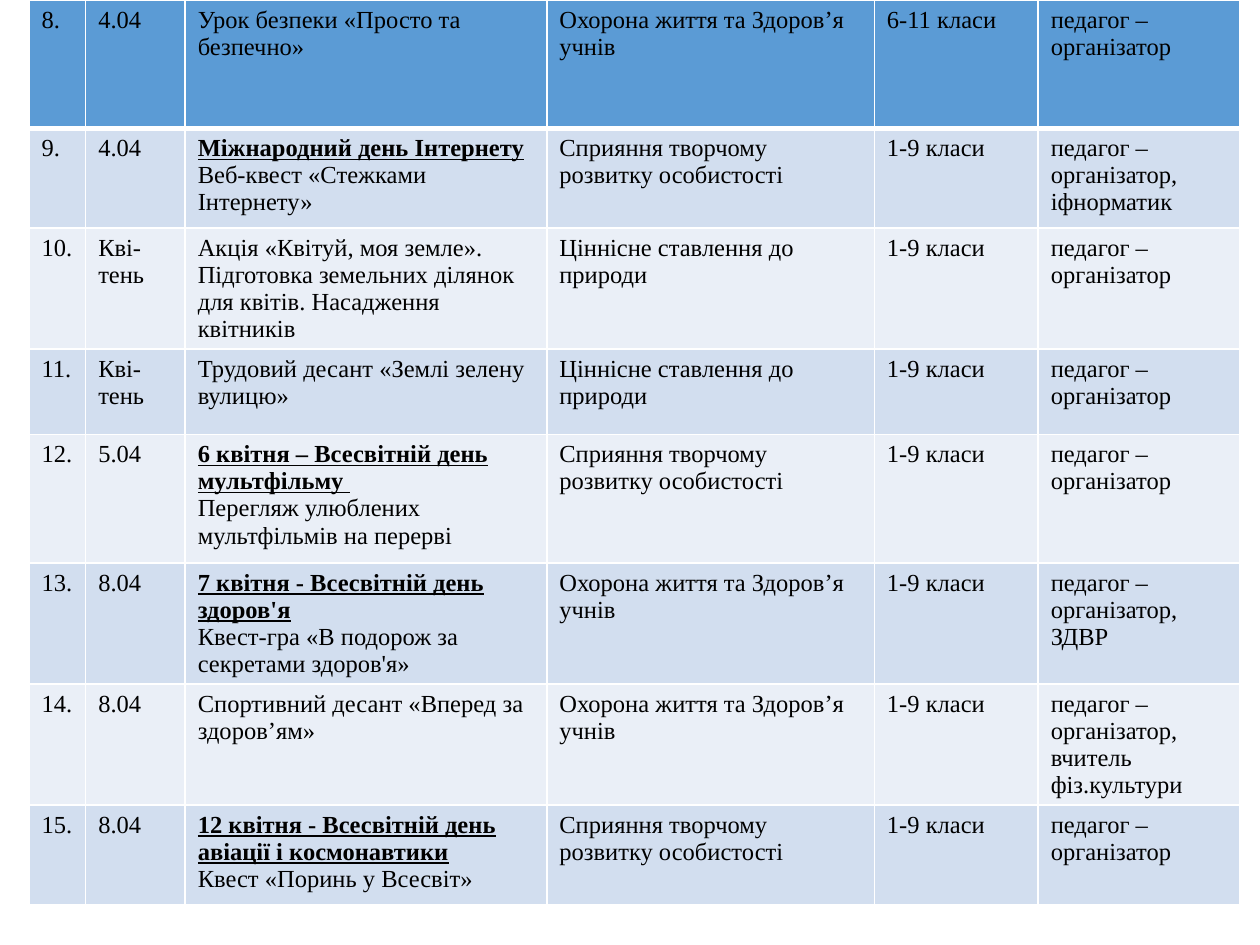
from dataclasses import dataclass
from pptx import Presentation
from pptx.dml.color import RGBColor as Rgb
from pptx.oxml import parse_xml
from pptx.oxml.ns import nsdecls
from pptx.util import Inches, Pt


@dataclass(frozen=True)
class Theme:
    font: str = "Times New Roman"
    size: int = 14
    ink: str = "000000"
    border: str = "FFFFFF"
    thin: float = 1
    thick: float = 3
    header: str = "5B9BD5"
    bands: tuple = ("D2DEEF", "EAEFF7")


THEME = Theme()
BREAK, PARAGRAPH = "line break", "new paragraph"

ORGANIZER = "педагог –організатор"
CREATIVITY = "Сприяння творчому розвитку особистості"
HEALTH = "Охорона життя та Здоров’я учнів"
NATURE = "Ціннісне ставлення до природи"
JUNIOR = "1-9 класи"

# A titled activity is (title, what separates it from the text, text).
EVENTS = [
    ("8.", "4.04", "Урок безпеки «Просто та безпечно»", HEALTH, "6-11 класи", ORGANIZER),
    ("9.", "4.04",
     ("Міжнародний день Інтернету", BREAK, "Веб-квест «Стежками Інтернету»"),
     CREATIVITY, JUNIOR, ORGANIZER + ", іфнорматик"),
    ("10.", "Кві-тень",
     "Акція «Квітуй, моя земле». Підготовка земельних ділянок для квітів. "
     "Насадження квітників",
     NATURE, JUNIOR, ORGANIZER),
    ("11.", "Кві-тень", "Трудовий десант «Землі зелену вулицю»", NATURE, JUNIOR, ORGANIZER),
    ("12.", "5.04",
     ("6 квітня – Всесвітній день мультфільму ", PARAGRAPH,
      "Перегляж улюблених мультфільмів на перерві"),
     CREATIVITY, JUNIOR, ORGANIZER),
    ("13.", "8.04",
     ("7 квітня - Всесвітній день здоров'я", PARAGRAPH,
      "Квест-гра «В подорож за секретами здоров'я»"),
     HEALTH, JUNIOR, ORGANIZER + ", ЗДВР"),
    ("14.", "8.04", "Спортивний десант «Вперед за здоров’ям»", HEALTH, JUNIOR,
     ORGANIZER + ", вчитель фіз.культури"),
    ("15.", "8.04",
     ("12 квітня - Вcесвітній день авіації і космонавтики", BREAK,
      "Квест «Поринь у Всесвіт»"),
     CREATIVITY, JUNIOR, ORGANIZER),
]

SLIDE_WIDTH, SLIDE_HEIGHT = 10, 7.5
TABLE_LEFT, TABLE_TOP = 0.23, 0
COLUMN_WIDTHS = (0.45, 0.79, 2.87, 2.6, 1.3, 1.6)
ROW_HEIGHTS = (1.02, 0.79, 0.65, 0.68, 1.02, 0.79, 0.79, 0.79)


def add_span(para, text, title=False):
    span = para.add_run()
    span.text = text
    span.font.name = THEME.font
    span.font.size = Pt(THEME.size)
    span.font.color.rgb = Rgb.from_string(THEME.ink)
    span.font.bold = span.font.underline = title


def write_cell(cell, content):
    para = cell.text_frame.paragraphs[0]
    if isinstance(content, tuple):
        title, separator, content = content
        add_span(para, title, title=True)
        if separator == BREAK:
            para.add_line_break()
        else:
            para = cell.text_frame.add_paragraph()
    add_span(para, content)


def draw_borders(cell, row):
    """Thin lines all round, with a thick one under the first row."""
    thick_sides = {0: "B", 1: "T"}
    for side in "LRTB":
        width = THEME.thick if thick_sides.get(row) == side else THEME.thin
        cell._tc.get_or_add_tcPr().append(parse_xml(
            f'<a:ln{side} {nsdecls("a")} w="{Pt(width)}"><a:solidFill>'
            f'<a:srgbClr val="{THEME.border}"/></a:solidFill></a:ln{side}>'))


def row_fill(row):
    return THEME.bands[(row - 1) % 2] if row else THEME.header


def add_schedule(page):
    frame = page.shapes.add_table(
        len(EVENTS), len(COLUMN_WIDTHS), Inches(TABLE_LEFT), Inches(TABLE_TOP),
        Inches(sum(COLUMN_WIDTHS)), Inches(sum(ROW_HEIGHTS)))
    table = frame.table
    table.first_row = table.horz_banding = False
    for column, width in zip(table.columns, COLUMN_WIDTHS):
        column.width = Inches(width)
    for row, (event, height) in enumerate(zip(EVENTS, ROW_HEIGHTS)):
        table.rows[row].height = Inches(height)
        for column, content in enumerate(event):
            cell = table.cell(row, column)
            write_cell(cell, content)
            draw_borders(cell, row)
            cell.fill.solid()
            cell.fill.fore_color.rgb = Rgb.from_string(row_fill(row))


def main():
    deck = Presentation()
    deck.slide_width, deck.slide_height = Inches(SLIDE_WIDTH), Inches(SLIDE_HEIGHT)
    add_schedule(deck.slides.add_slide(deck.slide_layouts[6]))
    deck.save("out.pptx")


if __name__ == "__main__":
    main()
